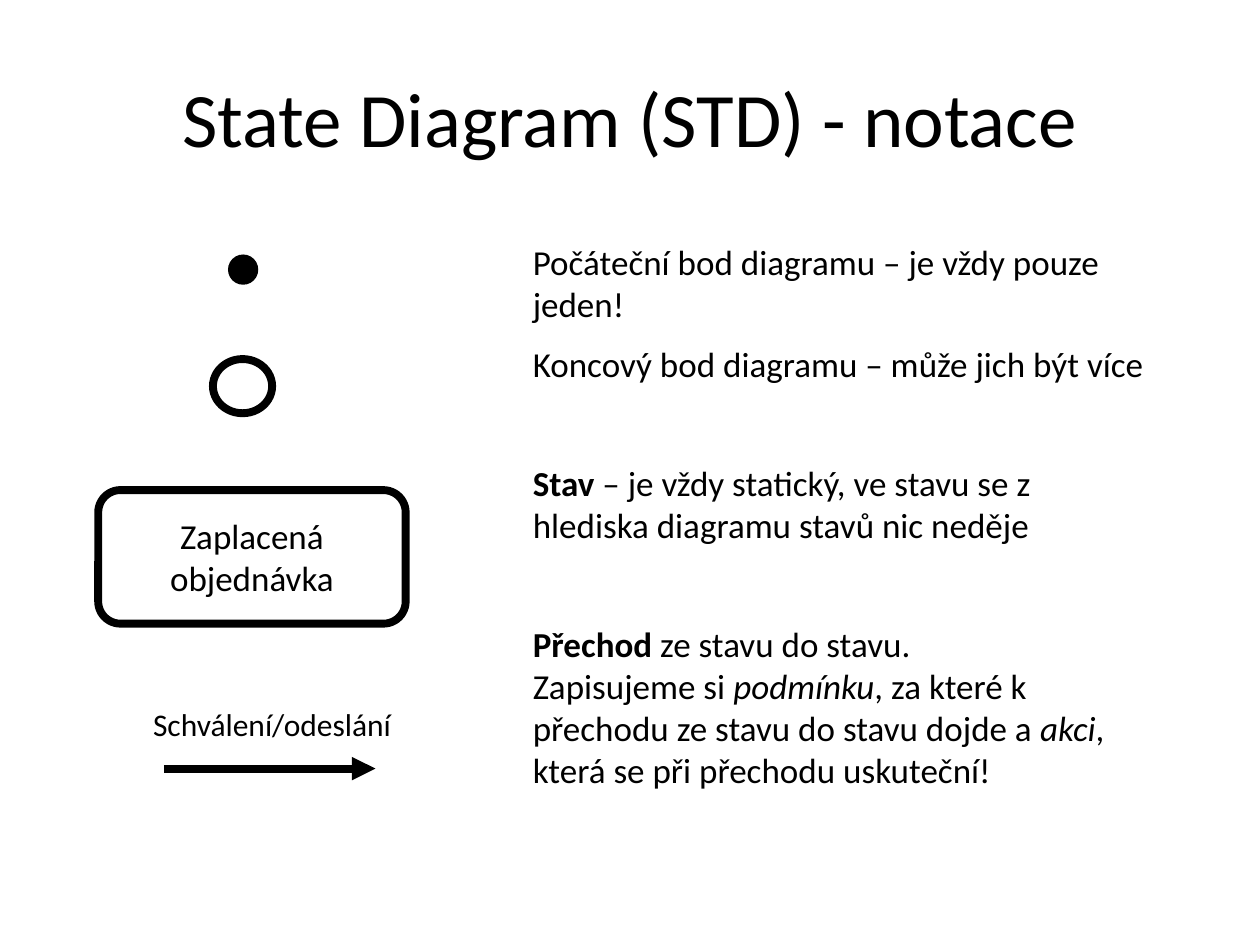
"""Build a slide that explains the notation of state diagrams."""
from pptx import Presentation
from pptx.dml.color import RGBColor
from pptx.enum.shapes import MSO_CONNECTOR, MSO_SHAPE
from pptx.enum.text import MSO_ANCHOR, MSO_AUTO_SIZE, PP_ALIGN
from pptx.oxml.ns import qn
from pptx.util import Inches, Pt
from lxml.etree import SubElement

COLORS = {"ink": "000000", "paper": "FFFFFF"}
FONT = "Calibri"
LINE_WIDTH = 4.5
NEAR, FAR = 10, 44
EXPLANATIONS = [
    (0, [("Počáteční bod diagramu – je vždy pouze jeden!", "")]),
    (NEAR, [("Koncový bod diagramu – může jich být více", "")]),
    (FAR, [("Stav", "bold"),
           (" – je vždy statický, ve stavu se z hlediska diagramu stavů nic neděje", "")]),
    (FAR, [("Přechod", "bold"), (" ze stavu do stavu.\nZapisujeme si ", ""),
           ("podmínku", "italic"),
           (", za které k přechodu ze stavu do stavu dojde a ", ""),
           ("akci", "italic"), (", která se při přechodu uskuteční!", "")]),
]


def color(name):
    """Return the named colour."""
    return RGBColor.from_string(COLORS[name])


def write(paragraph, text, size=20, style="", align=PP_ALIGN.LEFT, before=0):
    """Add formatted text to a paragraph, with a line break at each newline."""
    paragraph.alignment = align
    paragraph.space_before = Pt(before)
    for index, line in enumerate(text.split("\n")):
        if index:
            paragraph.add_line_break()
        run = paragraph.add_run()
        run.text = line
        run.font.name = FONT
        run.font.size = Pt(size)
        run.font.bold = style == "bold"
        run.font.italic = style == "italic"
        run.font.color.rgb = color("ink")


def add_title(slide, text):
    """Place and fill the title placeholder."""
    title = slide.shapes.title
    title.left, title.top = Inches(0.5), Inches(0.3)
    title.width, title.height = Inches(9), Inches(1.25)
    title.text_frame.vertical_anchor = MSO_ANCHOR.MIDDLE
    write(title.text_frame.paragraphs[0], text, size=44, align=PP_ALIGN.CENTER)


def add_symbol(slide, kind, left, top, width, height, filled=False):
    """Add a filled or an outlined symbol."""
    shape = slide.shapes.add_shape(
        kind, Inches(left), Inches(top), Inches(width), Inches(height))
    shape.shadow.inherit = False
    if filled:
        shape.fill.solid()
        shape.fill.fore_color.rgb = color("ink")
        shape.line.fill.background()
    else:
        shape.fill.background()
        shape.line.color.rgb = color("ink")
        shape.line.width = Pt(LINE_WIDTH)
    return shape


def add_state(slide, text, *box):
    """Add a rounded state box with its name."""
    frame = add_symbol(slide, MSO_SHAPE.FLOWCHART_ALTERNATE_PROCESS, *box).text_frame
    frame.word_wrap = False
    frame.vertical_anchor = MSO_ANCHOR.MIDDLE
    write(frame.paragraphs[0], text, align=PP_ALIGN.CENTER)


def add_arrow(slide, start, end, height):
    """Add a horizontal arrow."""
    arrow = slide.shapes.add_connector(
        MSO_CONNECTOR.STRAIGHT, Inches(start), Inches(height), Inches(end), Inches(height))
    arrow.line.color.rgb = color("ink")
    arrow.line.width = Pt(LINE_WIDTH)
    SubElement(arrow.line._get_or_add_ln(), qn("a:tailEnd"), type="triangle")
    SubElement(arrow._element.spPr, qn("a:effectLst"))


def add_text_frame(slide, left, top, width, height):
    """Add a wrapping text box and return its text frame."""
    frame = slide.shapes.add_textbox(
        Inches(left), Inches(top), Inches(width), Inches(height)).text_frame
    frame.word_wrap = True
    frame.auto_size = MSO_AUTO_SIZE.SHAPE_TO_FIT_TEXT
    return frame


def add_explanations(slide):
    """Add the explanations of all the symbols."""
    frame = add_text_frame(slide, 4.13, 1.86, 5.12, 4.65)
    for index, (before, parts) in enumerate(EXPLANATIONS):
        paragraph = frame.add_paragraph() if index else frame.paragraphs[0]
        for text, style in parts:
            write(paragraph, text, style=style, before=before)


def main():
    """Build and save the presentation."""
    presentation = Presentation()
    presentation.slide_width, presentation.slide_height = Inches(10), Inches(7.5)
    slide = presentation.slides.add_slide(presentation.slide_layouts[5])
    slide.background.fill.solid()
    slide.background.fill.fore_color.rgb = color("paper")
    add_title(slide, "State Diagram (STD) - notace")
    add_symbol(slide, MSO_SHAPE.OVAL, 1.81, 2.02, 0.24, 0.24, filled=True)
    add_symbol(slide, MSO_SHAPE.OVAL, 1.69, 2.85, 0.47, 0.43)
    add_state(slide, "Zaplacená\nobjednávka", 0.78, 3.89, 2.44, 1.06)
    add_arrow(slide, 1.3, 2.98, 6.1)
    label = add_text_frame(slide, 0.94, 5.55, 2.44, 0.4)
    write(label.paragraphs[0], "Schválení/odeslání", size=18, align=PP_ALIGN.CENTER)
    add_explanations(slide)
    presentation.save("out.pptx")


if __name__ == "__main__":
    main()
